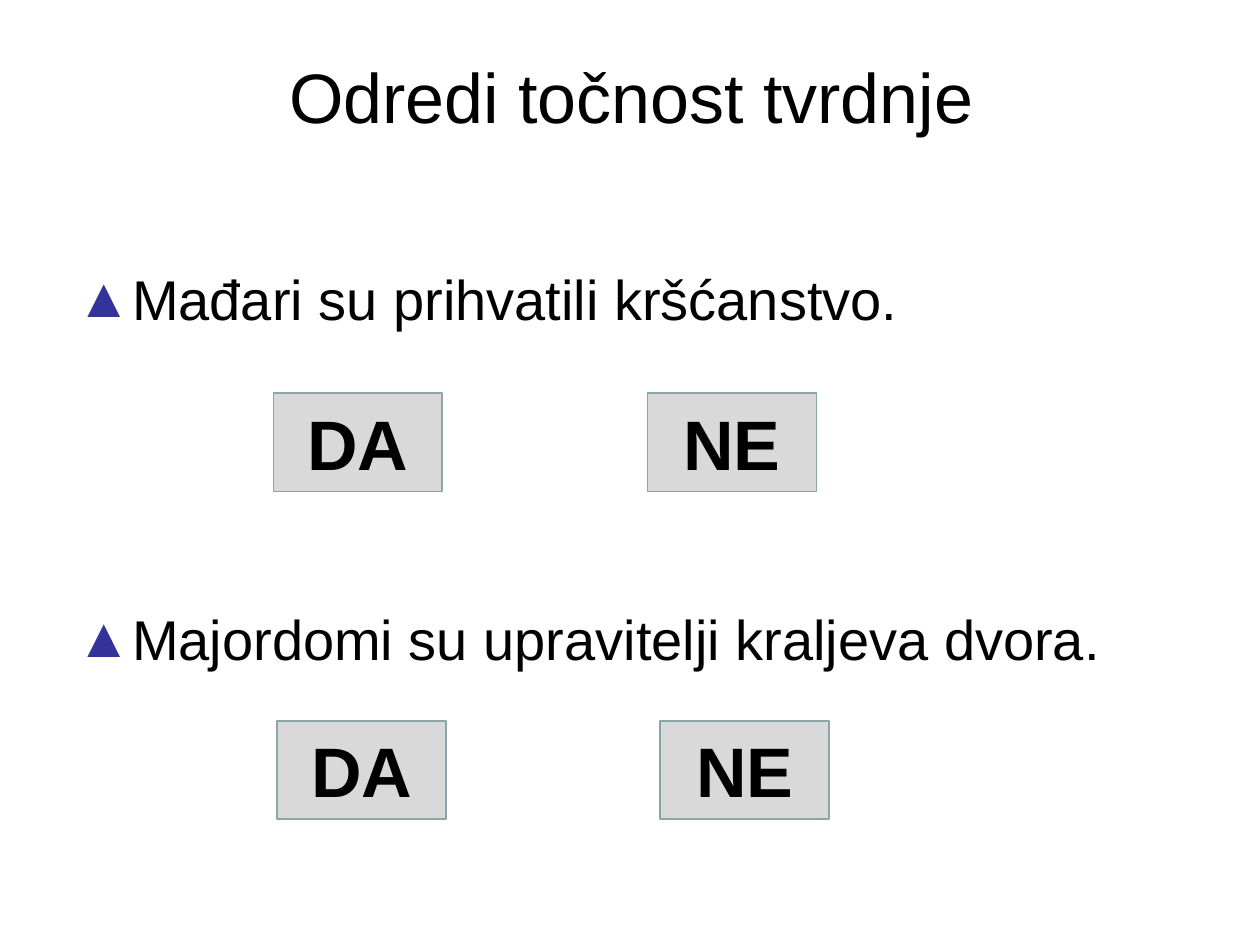
from lxml import etree
from pptx import Presentation
from pptx.dml.color import RGBColor
from pptx.enum.shapes import MSO_SHAPE
from pptx.enum.text import MSO_ANCHOR, PP_ALIGN
from pptx.oxml.ns import qn
from pptx.util import Inches, Pt

BUTTON = MSO_SHAPE.ACTION_BUTTON_CUSTOM
MIDDLE, TOP = MSO_ANCHOR.MIDDLE, MSO_ANCHOR.TOP
CENTER = PP_ALIGN.CENTER

TITLE = "Odredi točnost tvrdnje"
CLAIMS = [
    ("Mađari su prihvatili kršćanstvo.", 3.12, {"DA": 2.17, "NE": 5.14}),
    ("Majordomi su upravitelji kraljeva dvora.", 5.72, {"DA": 2.2, "NE": 5.24}),
]
THEME = {
    "font": "Arial", "ink": "000000", "mark": "333399",
    "fill": "D9D9D9", "edge": "8AA6A8", "head": 40, "body": 32,
}
WIDE, HIGH = 10, 7.5
LEFT, SPAN = 0.51, 0.9 * WIDE
KEY = (1.34, 0.78)
INDENT = Inches(0.38)
GAP = 137


def tint(name):
    return RGBColor.from_string(THEME[name])


def style(para, size, bold=False):
    font = para.font
    font.name, font.size, font.bold = THEME["font"], Pt(THEME[size]), bold
    font.color.rgb = tint("ink")


def add_text(slide, top, high, anchor):
    box = slide.shapes.add_textbox(*map(Inches, (LEFT, top, SPAN, high)))
    frame = box.text_frame
    frame.word_wrap = True
    frame.vertical_anchor = anchor
    return frame


def add_bullet(para):
    props = para._p.get_or_add_pPr()
    props.set("marL", str(INDENT))
    props.set("indent", str(-INDENT))
    color = etree.SubElement(props, qn("a:buClr"))
    etree.SubElement(color, qn("a:srgbClr"), val=THEME["mark"])
    etree.SubElement(props, qn("a:buFont"), typeface=THEME["font"])
    etree.SubElement(props, qn("a:buChar"), char="▲")


def add_label(frame, text, bold=False):
    para = frame.paragraphs[0]
    para.text, para.alignment = text, CENTER
    style(para, "head", bold)


def add_button(slide, text, left, top):
    key = slide.shapes.add_shape(BUTTON, *map(Inches, (left, top, *KEY)))
    key.shadow.inherit = False
    key.fill.solid()
    key.fill.fore_color.rgb = tint("fill")
    key.line.color.rgb = tint("edge")
    key.line.width = Pt(1)
    key.text_frame.vertical_anchor = MIDDLE
    add_label(key.text_frame, text, True)


def main():
    deck = Presentation()
    deck.slide_width, deck.slide_height = Inches(WIDE), Inches(HIGH)
    slide = deck.slides.add_slide(deck.slide_layouts[6])
    add_label(add_text(slide, 0.28, 0.95, MIDDLE), TITLE)
    body = add_text(slide, 1.78, 4.95, TOP)
    for row, (claim, top, keys) in enumerate(CLAIMS):
        para = body.add_paragraph() if row else body.paragraphs[0]
        para.text = claim
        add_bullet(para)
        para.line_spacing = 1.5
        para.space_before = Pt(GAP * row)
        style(para, "body")
        for text, left in keys.items():
            add_button(slide, text, left, top)
    deck.save("out.pptx")


if __name__ == "__main__":
    main()
